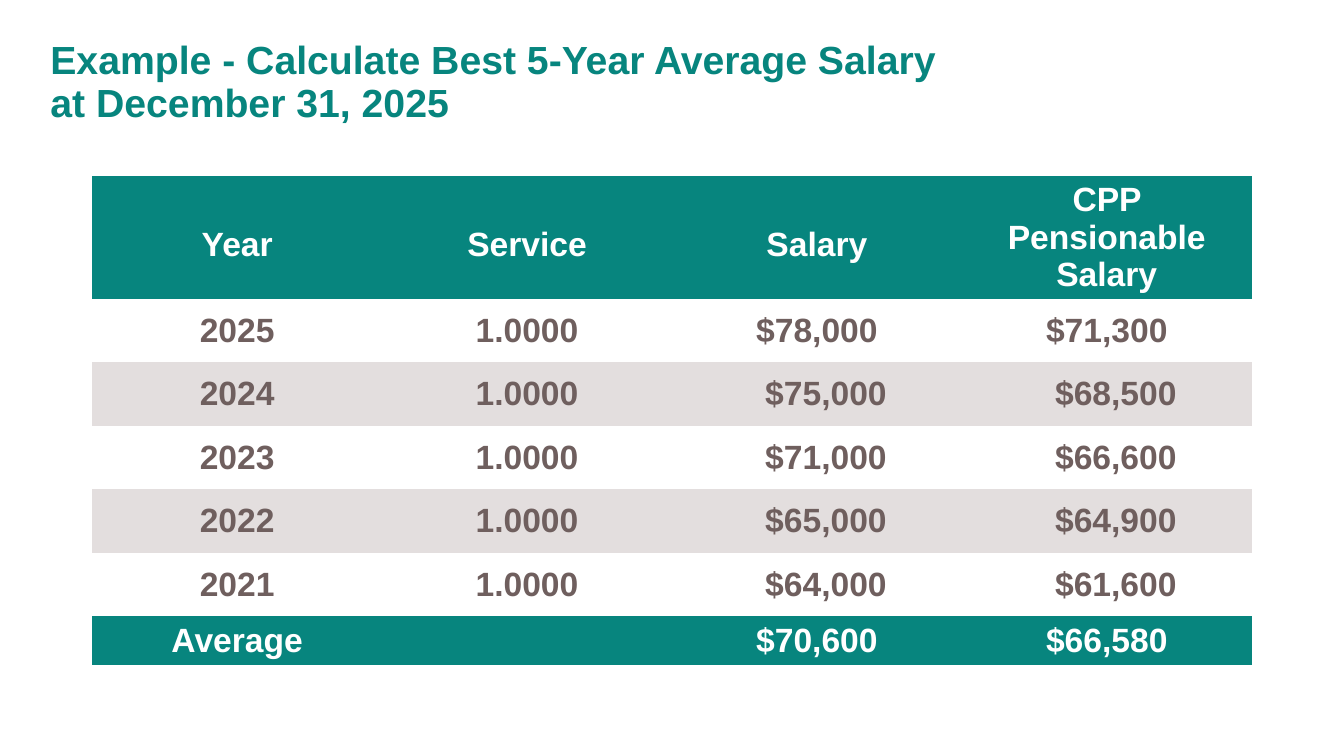
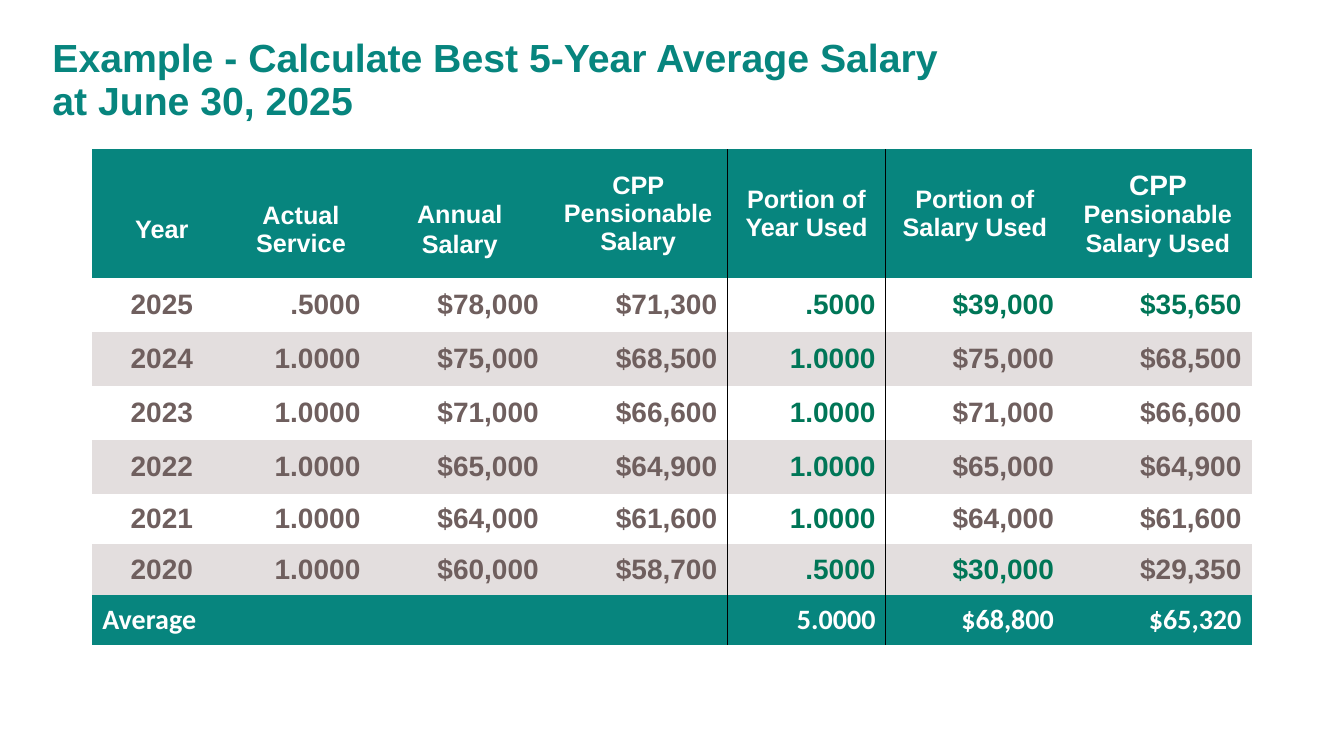
from dataclasses import dataclass
from typing import Optional

from lxml import etree
from pptx import Presentation
from pptx.dml.color import RGBColor
from pptx.enum.text import MSO_ANCHOR, MSO_AUTO_SIZE, PP_ALIGN
from pptx.oxml.ns import qn
from pptx.util import Inches, Pt

TEAL = RGBColor(0x07, 0x85, 0x7E)
GREEN = RGBColor(0x00, 0x76, 0x57)
BROWN = RGBColor(0x6F, 0x5F, 0x5E)
BAND = RGBColor(0xE3, 0xDE, 0xDE)
WHITE = RGBColor(0xFF, 0xFF, 0xFF)
BLACK = RGBColor(0x00, 0x00, 0x00)
LEFT, CENTER, RIGHT = PP_ALIGN.LEFT, PP_ALIGN.CENTER, PP_ALIGN.RIGHT
MIDDLE = MSO_ANCHOR.MIDDLE
NO_AUTOFIT = MSO_AUTO_SIZE.NONE
PLAIN_TABLE_STYLE = "{2D5ABB26-0587-4C30-8999-92F81FD0307C}"

SLIDE_WIDTH, SLIDE_HEIGHT = 13.33, 7.5
CONTENT_WIDTH = 11.5
TABLE_LEFT = (SLIDE_WIDTH - CONTENT_WIDTH) / 2
TITLE_HEIGHT = 1.17
TITLE_SIZE = 28
CELL_MARGIN_X, CELL_MARGIN_Y = 0.1, 0.05


@dataclass(frozen=True)
class Header:
    text: str
    drop: float = 0
    lead_size: Optional[float] = None


@dataclass(frozen=True)
class BodyRow:
    values: tuple[str, ...]
    highlights: int = 0
    indent: float = 0


@dataclass(frozen=True)
class SalaryTable:
    top: float
    column_widths: tuple[float, ...]
    row_heights: tuple[float, ...]
    headers: tuple[Header, ...]
    body: tuple[BodyRow, ...]
    footer: tuple[str, ...]
    header_size: float
    body_size: float
    number_align: PP_ALIGN
    footer_label_align: PP_ALIGN
    footer_font: str = "Arial"
    footer_label_span: int = 1
    used_column: Optional[int] = None


@dataclass(frozen=True)
class SalarySlide:
    title: str
    title_left: float
    title_top: float
    table: SalaryTable


def write_text(frame, text: str, *, size: float, color: RGBColor, align: PP_ALIGN,
               font: str = "Arial", lead_size: Optional[float] = None,
               line_spacing: Optional[float] = None) -> None:
    frame.word_wrap = True
    for index, line in enumerate(text.split("\n")):
        para = frame.paragraphs[0] if index == 0 else frame.add_paragraph()
        para.alignment = align
        para.line_spacing = line_spacing
        para.space_before = Pt(size * 0.05 if index else 0)
        spans = [(line, size)]
        if lead_size:
            lead, space, rest = line.partition(" ")
            spans = [(lead + space, lead_size), (rest, size)]
        for words, span_size in spans:
            for part_index, part in enumerate(words.split("\v")):
                if part_index:
                    para.add_line_break()
                span = para.add_run()
                span.text = part
                span.font.name = font
                span.font.size = Pt(span_size)
                span.font.bold = True
                span.font.color.rgb = color


def fill_cell(cell, text: str, *, fill: Optional[RGBColor], drop: float = 0,
              indent: float = 0, **text_format) -> None:
    cell.vertical_anchor = MIDDLE
    cell.margin_left = Inches(CELL_MARGIN_X + indent)
    cell.margin_right = Inches(CELL_MARGIN_X)
    cell.margin_top = Inches(CELL_MARGIN_Y + drop)
    cell.margin_bottom = Inches(CELL_MARGIN_Y)
    if fill is None:
        cell.fill.background()
    else:
        cell.fill.solid()
        cell.fill.fore_color.rgb = fill
    if text:
        write_text(cell.text_frame, text, **text_format)


def add_border(cell, side: str) -> None:
    line = etree.Element(qn(f"a:{side}"), w=str(Pt(1)))
    solid = etree.SubElement(line, qn("a:solidFill"))
    etree.SubElement(solid, qn("a:srgbClr"), val=str(BLACK))
    cell._tc.get_or_add_tcPr().insert(0, line)


def add_title(page, slide: SalarySlide) -> None:
    title = page.shapes.title
    title.left, title.top = Inches(slide.title_left), Inches(slide.title_top)
    title.width, title.height = Inches(CONTENT_WIDTH), Inches(TITLE_HEIGHT)
    title.text_frame.vertical_anchor = MIDDLE
    title.text_frame.auto_size = NO_AUTOFIT
    write_text(title.text_frame, slide.title, size=TITLE_SIZE, color=TEAL,
               align=LEFT, line_spacing=0.9)


def add_salary_table(page, content: SalaryTable) -> None:
    frame = page.shapes.add_table(
        len(content.row_heights), len(content.column_widths), Inches(TABLE_LEFT),
        Inches(content.top), Inches(CONTENT_WIDTH), Inches(sum(content.row_heights)))
    table = frame.table
    table.first_row = table.horz_banding = False
    for style in frame.element.iter(qn("a:tableStyleId")):
        style.text = PLAIN_TABLE_STYLE
    for column, width in zip(table.columns, content.column_widths):
        column.width = Inches(width)
    for row, height in zip(table.rows, content.row_heights):
        row.height = Inches(height)

    for column, header in enumerate(content.headers):
        fill_cell(table.cell(0, column), header.text, fill=TEAL, drop=header.drop,
                  size=content.header_size, color=WHITE, align=CENTER,
                  lead_size=header.lead_size)

    for row, record in enumerate(content.body, start=1):
        for column, value in enumerate(record.values):
            first = content.used_column
            marked = first is not None and first <= column < first + record.highlights
            fill_cell(table.cell(row, column), value,
                      fill=None if row % 2 else BAND,
                      indent=record.indent if value.startswith("$") else 0,
                      size=content.body_size, color=GREEN if marked else BROWN,
                      align=content.number_align if column else CENTER)

    last = len(content.row_heights) - 1
    if content.footer_label_span > 1:
        table.cell(last, 0).merge(table.cell(last, content.footer_label_span - 1))
    for column, value in enumerate(content.footer):
        fill_cell(table.cell(last, column), value, fill=TEAL, font=content.footer_font,
                  size=content.body_size, color=WHITE,
                  align=content.number_align if column else content.footer_label_align)

    if content.used_column is not None:
        for row in range(last + 1):
            add_border(table.cell(row, content.used_column - 1), "lnR")
            add_border(table.cell(row, content.used_column), "lnL")


DECEMBER = SalarySlide(
    title="Example - Calculate Best 5-Year Average Salary\vat December 31, 2025",
    title_left=0.4,
    title_top=0.24,
    table=SalaryTable(
        top=1.75,
        column_widths=(CONTENT_WIDTH / 4,) * 4,
        row_heights=(1.21,) + (0.63,) * 5 + (0.48,),
        headers=(
            Header("Year", drop=0.14),
            Header("Service", drop=0.14),
            Header("Salary", drop=0.14),
            Header("CPP Pensionable Salary"),
        ),
        body=(
            BodyRow(("2025", "1.0000", "$78,000", "$71,300")),
            BodyRow(("2024", "1.0000", "$75,000", "$68,500"), indent=0.18),
            BodyRow(("2023", "1.0000", "$71,000", "$66,600"), indent=0.18),
            BodyRow(("2022", "1.0000", "$65,000", "$64,900"), indent=0.18),
            BodyRow(("2021", "1.0000", "$64,000", "$61,600"), indent=0.18),
        ),
        footer=("Average", "", "$70,600", "$66,580"),
        header_size=24,
        body_size=24,
        number_align=CENTER,
        footer_label_align=CENTER,
    ),
)

JUNE = SalarySlide(
    title="Example - Calculate Best 5-Year Average Salary\vat June 30, 2025",
    title_left=0.42,
    title_top=0.22,
    table=SalaryTable(
        top=1.48,
        column_widths=(1.38, 1.38, 1.77, 1.77, 1.57, 1.77, 1.86),
        row_heights=(1.28,) + (0.535,) * 4 + (0.5,) * 3,
        headers=(
            Header("Year", drop=0.32),
            Header("Actual Service", drop=0.32),
            Header("Annual\nSalary", drop=0.32),
            Header("CPP Pensionable Salary"),
            Header("Portion of Year Used"),
            Header("Portion of Salary Used"),
            Header("CPP Pensionable Salary Used", lead_size=20),
        ),
        body=(
            BodyRow(("2025", ".5000", "$78,000", "$71,300",
                     ".5000", "$39,000", "$35,650"), highlights=3),
            BodyRow(("2024", "1.0000", "$75,000", "$68,500",
                     "1.0000", "$75,000", "$68,500"), highlights=1),
            BodyRow(("2023", "1.0000", "$71,000", "$66,600",
                     "1.0000", "$71,000", "$66,600"), highlights=1),
            BodyRow(("2022", "1.0000", "$65,000", "$64,900",
                     "1.0000", "$65,000", "$64,900"), highlights=1),
            BodyRow(("2021", "1.0000", "$64,000", "$61,600",
                     "1.0000", "$64,000", "$61,600"), highlights=1),
            BodyRow(("2020", "1.0000", "$60,000", "$58,700",
                     ".5000", "$30,000", "$29,350"), highlights=2),
        ),
        footer=("Average", "", "", "", "5.0000", "$68,800", "$65,320"),
        header_size=18,
        body_size=20,
        number_align=RIGHT,
        footer_label_align=LEFT,
        footer_font="Calibri",
        footer_label_span=2,
        used_column=4,
    ),
)


def main() -> None:
    deck = Presentation()
    deck.slide_width, deck.slide_height = Inches(SLIDE_WIDTH), Inches(SLIDE_HEIGHT)
    title_only = deck.slide_layouts.get_by_name("Title Only")
    for slide in (DECEMBER, JUNE):
        page = deck.slides.add_slide(title_only)
        add_title(page, slide)
        add_salary_table(page, slide.table)
    deck.save("out.pptx")


if __name__ == "__main__":
    main()
